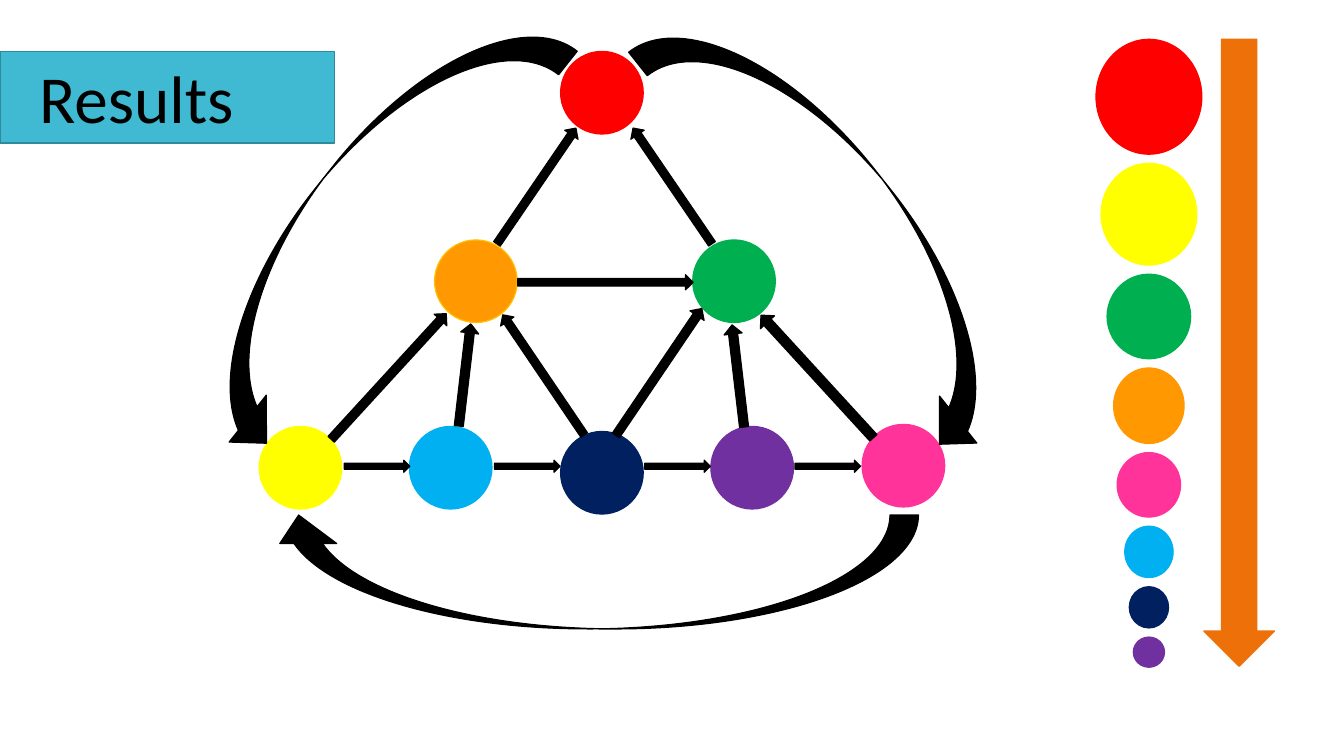
"""Build the Results slide: a dominance network with a ranked legend."""
from pptx import Presentation
from pptx.dml.color import RGBColor
from pptx.enum import shapes, text
from pptx.util import Inches, Pt

COLORS = {
    "red": "FF0000", "orange": "FF9801", "gold": "FFC000", "green": "00B050",
    "yellow": "FFFF00", "navy": "002060", "pink": "FF3399", "sky": "00B0F0",
    "purple": "7030A0", "black": "000000", "teal": "40BAD2",
    "dark_teal": "2F8A9B", "rank_arrow": "EE7008",
}
KINDS = shapes.MSO_SHAPE
NODE_SIZE = 0.82
NODES = [
    (5.56, 0.51, "red", "red"), (4.31, 2.38, "orange", "gold"),
    (6.87, 2.38, "green", "green"), (2.57, 4.23, "yellow", "yellow"),
    (5.56, 4.28, "navy", "navy"), (8.55, 4.21, "pink", "pink"),
    (4.06, 4.23, "sky", "sky"), (7.05, 4.23, "purple", "purple"),
]
CURVED_ARROWS = [
    (KINDS.CURVED_UP_ARROW, 2.68, 5.11, 6.43, 1.13, 0, True),
    (KINDS.CURVED_RIGHT_ARROW, 3.03, -0.43, 1.19, 5.26, 38.4, False),
    (KINDS.CURVED_RIGHT_ARROW, 7.74, -0.42, 1.19, 5.26, 321.6, True),
]
LINK_ARROWS = [
    (5.24, 1.15, 0.16, 1.39, 214.3), (6.59, 1.15, 0.16, 1.39, 145.7),
    (3.77, 2.89, 0.17, 1.69, 222.5), (8.01, 2.91, 0.19, 1.65, 137.5),
    (4.52, 3.21, 0.18, 1.02, 186.7), (7.23, 3.22, 0.18, 1.02, 173.3),
    (6.45, 2.93, 0.17, 1.52, 214.1), (5.31, 3.0, 0.16, 1.44, 145.9),
    (5.93, 1.93, 0.15, 1.74, 270),
]
LEGEND = [
    ("red", 1.05, 1.14), ("yellow", 0.95, 1.01), ("green", 0.83, 0.84),
    ("orange", 0.7, 0.75), ("pink", 0.63, 0.64), ("sky", 0.48, 0.51),
    ("navy", 0.39, 0.41), ("purple", 0.31, 0.3),
]


def add_figure(slide, kind, left, top, width, height, fill, line=None, rotation=0, flip=False):
    """Add a filled preset shape, outlined in its own fill unless told otherwise."""
    shape = slide.shapes.add_shape(kind, Inches(left), Inches(top), Inches(width), Inches(height))
    shape.shadow.inherit = False
    shape.fill.solid()
    shape.fill.fore_color.rgb = RGBColor.from_string(COLORS[fill])
    shape.line.color.rgb = RGBColor.from_string(COLORS[line or fill])
    shape.line.width = Pt(0.85)
    shape.rotation = rotation
    if flip:
        shape.element.spPr.xfrm.set("flipH", "1")
    return shape


def add_title(slide):
    """Add the title text over its banner."""
    box = slide.shapes.add_textbox(Inches(0.29), Inches(0.51), Inches(2.2), Inches(0.91))
    frame = box.text_frame
    frame.word_wrap = False
    frame.auto_size = text.MSO_AUTO_SIZE.SHAPE_TO_FIT_TEXT
    frame.text = "Results"
    font = frame.paragraphs[0].runs[0].font
    font.name = "Calibri"
    font.size = Pt(48)
    font.color.rgb = RGBColor.from_string(COLORS["black"])


def add_network(slide):
    """Add the nodes and the arrows between them."""
    for left, top, fill, line in NODES:
        add_figure(slide, KINDS.FLOWCHART_CONNECTOR, left, top, NODE_SIZE, NODE_SIZE, fill, line)
    for kind, left, top, width, height, rotation, flip in CURVED_ARROWS:
        add_figure(slide, kind, left, top, width, height, "black", rotation=rotation, flip=flip)
    row_arrows = [(3.68 + 1.49 * index, 4.3, 0.12, 0.65, 270) for index in range(4)]
    for left, top, width, height, rotation in LINK_ARROWS + row_arrows:
        add_figure(slide, KINDS.DOWN_ARROW, left, top, width, height, "black", rotation=rotation)


def add_legend(slide, center=11.395, top=0.39, gap=0.09):
    """Stack the ranked circles on one axis beside a long arrow."""
    add_figure(slide, KINDS.DOWN_ARROW, 11.94, top, 0.7, 6.22, "rank_arrow")
    for color, width, height in LEGEND:
        add_figure(slide, KINDS.FLOWCHART_CONNECTOR, center - width / 2, top, width, height, color)
        top += height + gap


def main():
    """Build and save the presentation."""
    presentation = Presentation()
    presentation.slide_width = Inches(13.33)
    presentation.slide_height = Inches(7.5)
    slide = presentation.slides.add_slide(presentation.slide_layouts[6])
    add_figure(slide, KINDS.RECTANGLE, 0, 0.51, 3.32, 0.91, "teal", "dark_teal")
    add_network(slide)
    add_legend(slide)
    add_title(slide)
    presentation.save("out.pptx")


if __name__ == "__main__":
    main()
